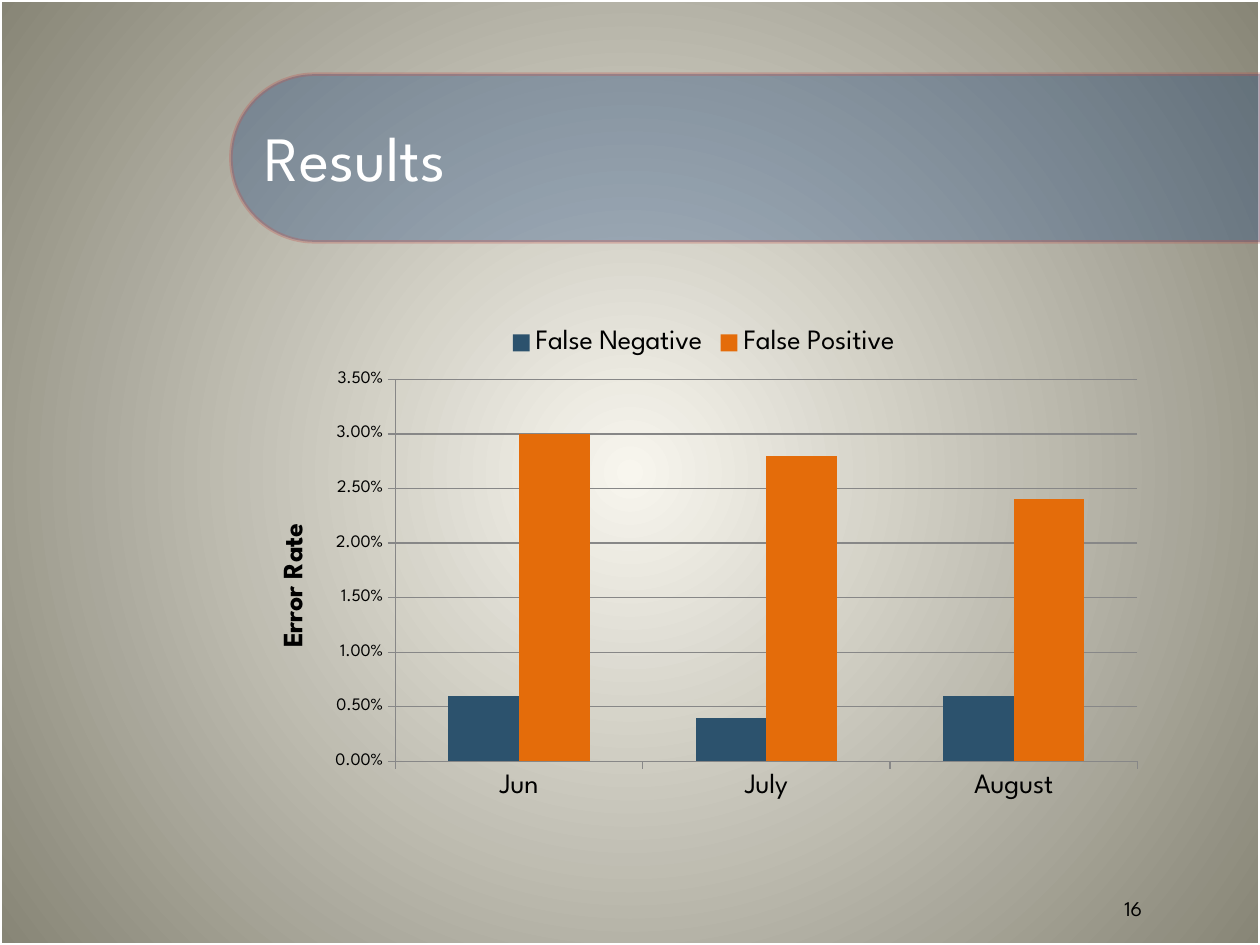
from lxml import etree
from pptx import Presentation
from pptx.chart import data
from pptx.dml import color
from pptx.enum import chart as kinds, shapes, text
from pptx.oxml import ns, parse_xml
from pptx.util import Cm, Pt

FONT = "League Spartan"
COLORS = {
    "white": "FFFFFF", "black": "000000", "bar": "073779", "edge": "C0504D",
    "grid": "878787", "glow": "F8F6EE", "rim": "878576",
    "False Negative": "2C526D", "False Positive": "E46C0A",
}
TITLE = "Results"
NUMBER = "16"
AXIS_TITLE = "Error Rate"
MONTHS = ["Jun", "July", "August"]
RATES = {
    "False Negative": [0.006, 0.004, 0.006],
    "False Positive": [0.03, 0.028, 0.024],
}
PLACES = {
    "frame": (0, 0, 25.4, 19.05),
    "bar": (13.34, -7.19, 3.38, 20.75),
    "title": (5.08, 1.47, 20.32, 3.38),
    "number": (20.75, 17.98, 4.19, 0.64),
    "chart": (5.08, 6.35, 18.21, 9.98),
}


def place(name):
    return [Cm(length) for length in PLACES[name]]


def rgb(name):
    return color.RGBColor.from_string(COLORS[name])


def style(font, size, shade="black", **values):
    for key, value in dict(name=FONT, size=Pt(size), **values).items():
        setattr(font, key, value)
    font.color.rgb = rgb(shade)


def write(box, words, size, shade, align):
    frame = box.text_frame
    frame.word_wrap = True
    frame.auto_size = text.MSO_AUTO_SIZE.NONE
    frame.vertical_anchor = text.MSO_ANCHOR.MIDDLE
    para = frame.paragraphs[0]
    para.alignment = align
    span = para.add_run()
    span.text = words
    style(span.font, size, shade)


def add_outline(page, kind, name, shade):
    shape = page.shapes.add_shape(kind, *place(name))
    shape.shadow.inherit = False
    shape.fill.background()
    shape.line.color.rgb = rgb(shade)
    shape.line.width = Pt(2)
    return shape


def paint_background(page):
    stops = "".join(
        f'<a:gs pos="{pos}"><a:srgbClr val="{COLORS[name]}"/></a:gs>'
        for pos, name in ((0, "glow"), (100000, "rim")))
    page._element.cSld.insert(0, parse_xml(
        f'<p:bg {ns.nsdecls("p", "a")}><p:bgPr><a:gradFill rotWithShape="1">'
        f'<a:gsLst>{stops}</a:gsLst><a:path path="circle">'
        '<a:fillToRect l="50000" t="50000" r="50000" b="50000"/></a:path>'
        '</a:gradFill><a:effectLst/></p:bgPr></p:bg>'))


def add_bar(page):
    bar = add_outline(page, shapes.MSO_SHAPE.ROUND_2_SAME_RECTANGLE, "bar", "edge")
    bar.rotation = 270
    bar.adjustments[0], bar.adjustments[1] = 0.5, 0
    bar.fill.solid()
    bar.fill.fore_color.rgb = rgb("bar")
    for shade in bar._element.spPr.iter(ns.qn("a:srgbClr")):
        etree.SubElement(shade, ns.qn("a:alpha"), val="30000")


def add_rates(page):
    table = data.CategoryChartData(number_format="0.00%")
    table.categories = MONTHS
    for name, values in RATES.items():
        table.add_series(name, values)
    chart = page.shapes.add_chart(
        kinds.XL_CHART_TYPE.COLUMN_CLUSTERED, *place("chart"), table).chart
    style(chart.font, 10)
    chart.has_title = False
    chart.has_legend = True
    chart.legend.position = kinds.XL_LEGEND_POSITION.TOP
    chart.legend.include_in_layout = False
    style(chart.legend.font, 16)

    plot = chart.plots[0]
    plot.gap_width, plot.overlap = 150, 0
    plot.vary_by_categories = False
    for series in plot.series:
        series.format.fill.solid()
        series.format.fill.fore_color.rgb = rgb(series.name)

    months, rates = chart.category_axis, chart.value_axis
    for axis, size in ((months, 16), (rates, 10)):
        axis.major_tick_mark = kinds.XL_TICK_MARK.OUTSIDE
        axis.format.line.color.rgb = rgb("grid")
        style(axis.tick_labels.font, size)
    rates.minimum_scale, rates.maximum_scale, rates.major_unit = 0, 0.035, 0.005
    rates.tick_labels.number_format = "0.00%"
    rates.tick_labels.number_format_is_linked = False
    rates.has_major_gridlines = True
    rates.major_gridlines.format.line.color.rgb = rgb("grid")
    span = rates.axis_title.text_frame.paragraphs[0].add_run()
    span.text = AXIS_TITLE
    style(span.font, 16, bold=True)


def main():
    deck = Presentation()
    deck.slide_width, deck.slide_height = place("frame")[2:]
    page = deck.slides.add_slide(deck.slide_layouts[5])
    paint_background(page)
    add_outline(page, shapes.MSO_SHAPE.RECTANGLE, "frame", "white")
    add_bar(page)

    title = page.shapes.title
    title.left, title.top, title.width, title.height = place("title")
    write(title, TITLE, 36, "white", text.PP_ALIGN.LEFT)
    page.shapes._spTree.append(title._element)

    number = page.shapes.add_textbox(*place("number"))
    write(number, NUMBER, 12, "black", text.PP_ALIGN.CENTER)
    add_rates(page)
    deck.save("out.pptx")


if __name__ == "__main__":
    main()
